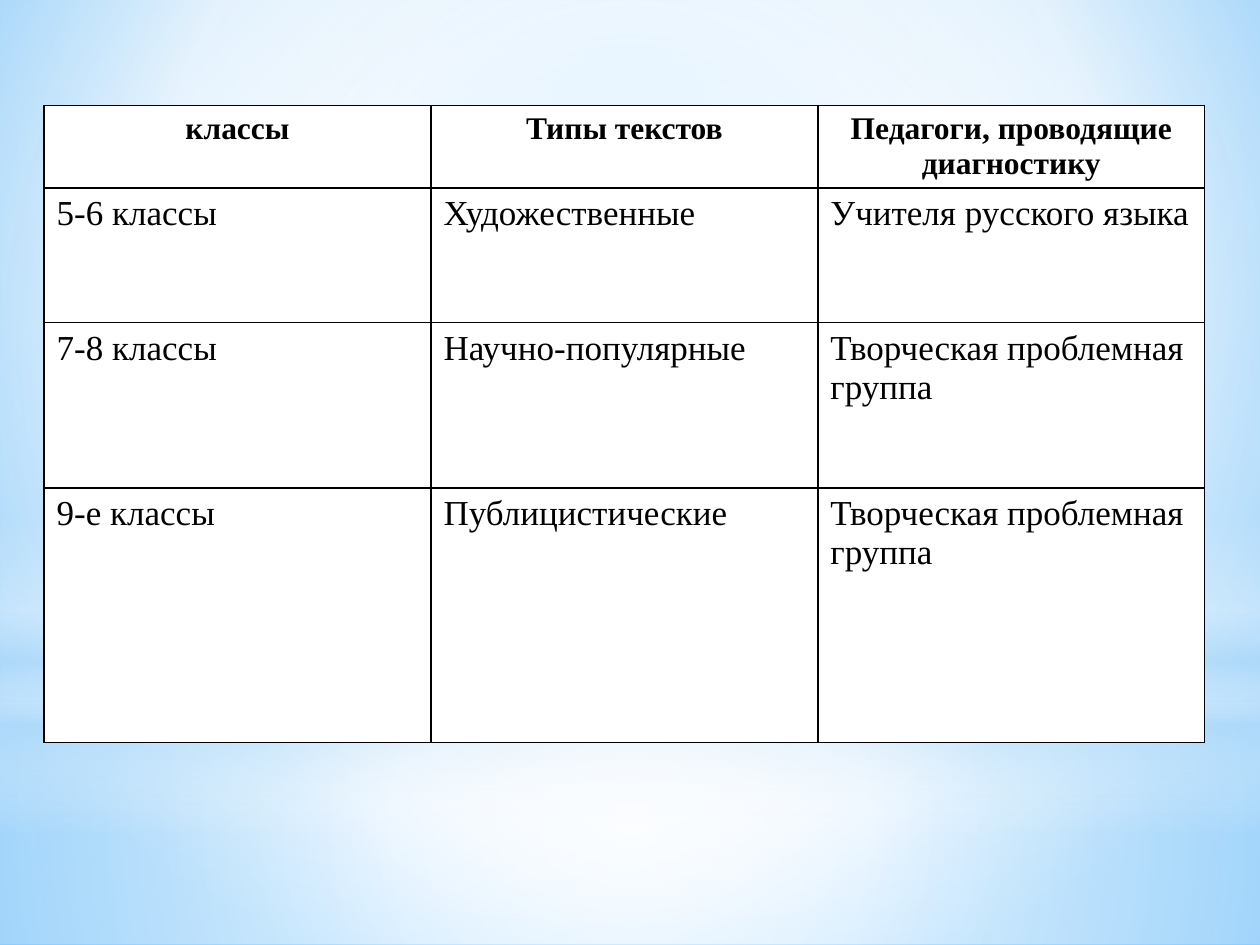
from lxml import etree
from pptx import Presentation
from pptx.dml.color import RGBColor
from pptx.enum.shapes import MSO_SHAPE
from pptx.enum.text import PP_ALIGN
from pptx.oxml.ns import qn
from pptx.util import Pt

RECT, OVAL = MSO_SHAPE.RECTANGLE, MSO_SHAPE.OVAL
CENTER, LEFT = PP_ALIGN.CENTER, PP_ALIGN.LEFT
FONT = "Times New Roman"
COLORS = {
    "white": "FFFFFF",
    "black": "000000",
    "pale": "B4DCFA",
    "sky": "9ED5FF",
    "blue": "5BB9FF",
}
MIDDLE = (50, 50, 50, 50)

# Gradient stops: position, colour, opacity (all in percent)
BACK = [(0, "sky", 100), (60, "white", 100), (100, "blue", 100)]
GLOWS = [  # shape, top, height, stops, focus (None for a vertical gradient)
    (RECT, 402, 138, [(0, "white", 91), (37, "white", 76), (100, "pale", 79)], MIDDLE),
    (RECT, 0, 402, [(0, "white", 89), (48, "white", 62), (100, "pale", 79)], MIDDLE),
    (RECT, 297, 180, [(0, "white", 0), (29, "white", 30), (45, "pale", 40),
                      (55, "white", 26), (65, "pale", 60), (100, "white", 0)], None),
    (OVAL, 126, 402, [(0, "white", 100), (56, "white", 0)], MIDDLE),
]

ROWS = [
    ("классы", "Типы текстов", "Педагоги, проводящие диагностику"),
    ("5-6 классы", "Художественные", "Учителя русского языка"),
    ("7-8 классы", "Научно-популярные", "Творческая проблемная группа"),
    ("9-е классы", "Публицистические", "Творческая проблемная группа"),
]
HEIGHTS = [41, 77, 94.5, 145.5]
WIDTH = 221.1


def add_tag(parent, name, **attrs):
    return etree.SubElement(parent, qn(name), {k: str(v) for k, v in attrs.items()})


def shade(fill, root, stops, focus):
    """Give a fill a circular gradient, or a vertical one without focus."""
    fill.gradient()
    grad = root.find(".//" + qn("a:gradFill"))
    for child in list(grad):
        grad.remove(child)
    group = add_tag(grad, "a:gsLst")
    for pos, name, alpha in stops:
        stop = add_tag(group, "a:gs", pos=pos * 1000)
        color = add_tag(stop, "a:srgbClr", val=COLORS[name])
        if alpha < 100:
            add_tag(color, "a:alpha", val=alpha * 1000)
    if focus:
        ring = add_tag(grad, "a:path", path="circle")
        sides = {k: v * 1000 for k, v in zip("ltrb", focus)}
        add_tag(ring, "a:fillToRect", **sides)
    else:
        add_tag(grad, "a:lin", ang=90 * 60000, scaled=0)


def add_glow(slide, kind, top, height, stops, focus):
    shape = slide.shapes.add_shape(kind, 0, Pt(top), Pt(720), Pt(height))
    shape.shadow.inherit = False
    shape.line.fill.background()
    shade(shape.fill, shape.element, stops, focus)


def add_edges(cell):
    props = cell._tc.get_or_add_tcPr()
    for i, side in enumerate(("lnL", "lnR", "lnT", "lnB")):
        line = etree.Element(qn("a:" + side), w=str(Pt(1)))
        add_tag(add_tag(line, "a:solidFill"), "a:srgbClr", val=COLORS["black"])
        props.insert(i, line)


def fill_cell(cell, text, head):
    cell.text = text
    cell.fill.solid()
    cell.fill.fore_color.rgb = RGBColor.from_string(COLORS["white"])
    para = cell.text_frame.paragraphs[0]
    para.alignment = CENTER if head else LEFT
    para.font.name = FONT
    para.font.size = Pt(18 if head else 20)
    para.font.bold = head
    para.font.color.rgb = RGBColor.from_string(COLORS["black"])
    add_edges(cell)


def add_grid(slide):
    count = len(ROWS[0])
    table = slide.shapes.add_table(len(ROWS), count, Pt(25.2), Pt(60.3),
                                   Pt(WIDTH * count), Pt(sum(HEIGHTS))).table
    table.horz_banding = False
    for col in table.columns:
        col.width = Pt(WIDTH)
    for r, (texts, height) in enumerate(zip(ROWS, HEIGHTS)):
        table.rows[r].height = Pt(height)
        for c, text in enumerate(texts):
            fill_cell(table.cell(r, c), text, r == 0)


def main():
    deck = Presentation()
    deck.slide_width, deck.slide_height = Pt(720), Pt(540)
    slide = deck.slides.add_slide(deck.slide_layouts[6])
    # Backdrop with soft glows
    shade(slide.background.fill, slide.element, BACK, (20, 10, 20, 60))
    for glow in GLOWS:
        add_glow(slide, *glow)
    # Table of classes, texts and teachers
    add_grid(slide)
    deck.save("out.pptx")


if __name__ == "__main__":
    main()
